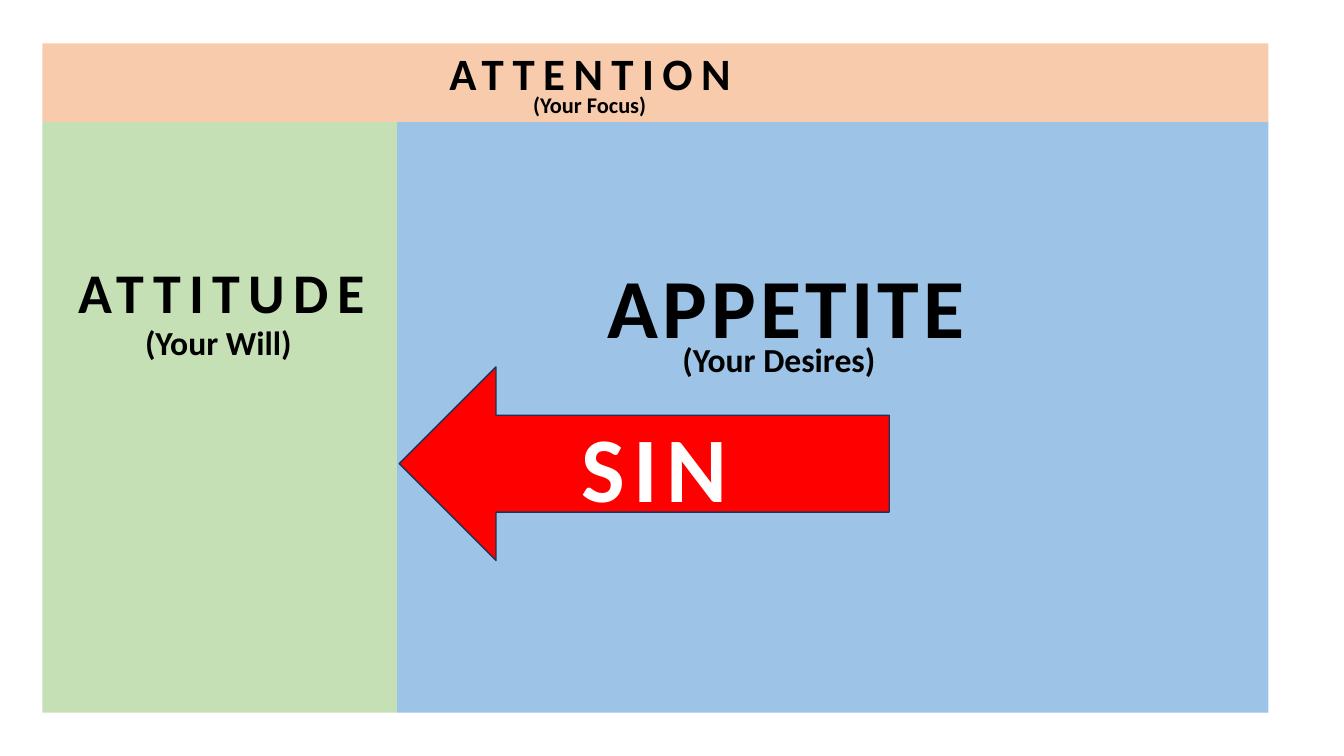
from dataclasses import dataclass

from pptx import Presentation
from pptx.dml.color import RGBColor
from pptx.enum.shapes import MSO_SHAPE as Preset
from pptx.enum.text import MSO_AUTO_SIZE as AutoSize, PP_ALIGN as Align
from pptx.util import Inches, Pt

FONT = "Calibri"
BLACK = RGBColor(0x00, 0x00, 0x00)
WHITE = RGBColor(0xFF, 0xFF, 0xFF)
GREEN = RGBColor(0xC5, 0xE0, 0xB4)
BLUE = RGBColor(0x9D, 0xC3, 0xE6)
PEACH = RGBColor(0xF8, 0xCB, 0xAD)
RED = RGBColor(0xFF, 0x00, 0x00)
NAVY = RGBColor(0x1E, 0x32, 0x56)


@dataclass
class Box:
    """A rectangle in inches."""
    left: float
    top: float
    width: float
    height: float

    def inner(self, dx, dy, width, height):
        """Return a box offset from this one's top left corner."""
        return Box(self.left + dx, self.top + dy, width, height)

    def lengths(self):
        """Return the position and size as slide lengths."""
        return [Inches(v) for v in (self.left, self.top, self.width, self.height)]


@dataclass
class Label:
    """Wording with its look and its place inside a region."""
    text: str
    place: tuple
    size: int
    spacing: int = 0
    color: RGBColor = BLACK


def add_block(slide, box, preset, fill, outline=None):
    """Draw a filled preset shape, outlined only when a colour is given."""
    block = slide.shapes.add_shape(preset, *box.lengths())
    block.shadow.inherit = False
    block.fill.solid()
    block.fill.fore_color.rgb = fill
    if outline is None:
        block.line.fill.background()
    else:
        block.line.color.rgb = outline
        block.line.width = Pt(1)


def add_label(slide, region, label):
    """Write one bold label, placed relative to its region."""
    textbox = slide.shapes.add_textbox(*region.inner(*label.place).lengths())
    frame = textbox.text_frame
    frame.word_wrap = True
    frame.auto_size = AutoSize.SHAPE_TO_FIT_TEXT
    frame.text = label.text
    paragraph = frame.paragraphs[0]
    paragraph.alignment = Align.LEFT
    run = paragraph.runs[0]
    run.font.name = FONT
    run.font.size = Pt(label.size)
    run.font.bold = True
    run.font.color.rgb = label.color
    if label.spacing:
        run.font._element.set("spc", str(label.spacing * 100))


def add_region(slide, box, fill, labels, preset=Preset.RECTANGLE, outline=None):
    """Draw a coloured region with its labels."""
    add_block(slide, box, preset, fill, outline)
    for label in labels:
        add_label(slide, box, label)


def add_soul_diagram(slide, box):
    """Split the box into attention, attitude and appetite, with sin pressing on the will."""
    band_height, will_width = 0.78, 3.52
    body_height = box.height - band_height
    attention = box.inner(0, 0, box.width, band_height)
    attitude = box.inner(0, band_height, will_width, body_height)
    appetite = box.inner(will_width, band_height, box.width - will_width, body_height)
    sin = appetite.inner(0.02, 2.43, 4.86, 1.92)

    add_region(slide, attitude, GREEN, [
        Label("ATTITUDE", (0.26, 1.3, 4.51, 0.77), 40, 6),
        Label("(Your Will)", (0.92, 1.93, 3.17, 0.5), 24),
    ])
    add_region(slide, appetite, BLUE, [
        Label("APPETITE", (1.99, 1.27, 5.23, 1.11), 60, 3),
        Label("(Your Desires)", (2.73, 2.1, 2.51, 0.5), 24),
    ])
    add_region(slide, attention, PEACH, [
        Label("ATTENTION", (3.94, -0.03, 6.6, 0.64), 32, 6),
        Label("(Your Focus)", (4.77, 0.43, 2.91, 0.37), 16),
    ])
    add_region(slide, sin, RED, [
        Label("SIN", (1.71, 0.38, 4.51, 1.21), 66, 6, WHITE),
    ], Preset.LEFT_ARROW, NAVY)


def main():
    """Build and save the slide."""
    deck = Presentation()
    deck.slide_width = Inches(13.33)
    deck.slide_height = Inches(7.5)
    slide = deck.slides.add_slide(deck.slide_layouts[6])
    add_soul_diagram(slide, Box(0.42, 0.43, 12.16, 6.64))
    deck.save("out.pptx")


if __name__ == "__main__":
    main()
